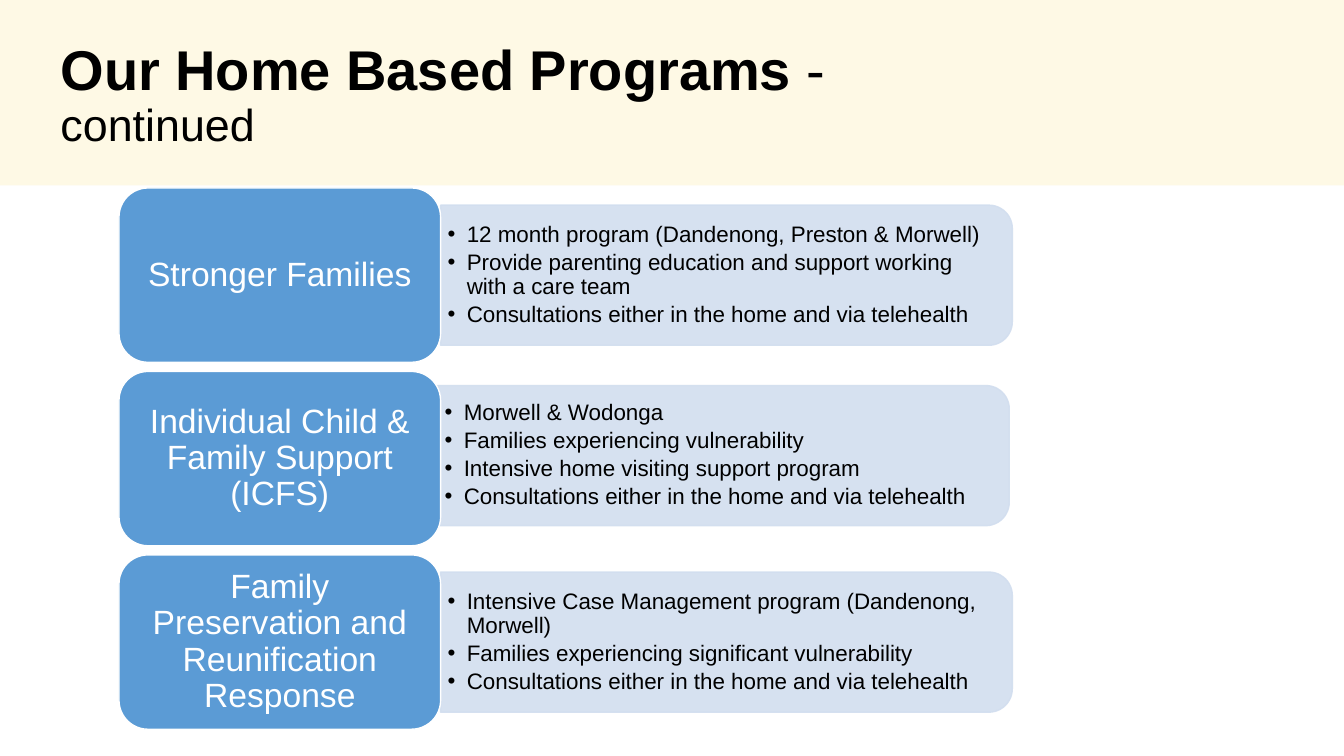
from lxml.etree import SubElement
from pptx import Presentation
from pptx.dml.color import RGBColor
from pptx.enum.shapes import MSO_SHAPE as Shape
from pptx.enum.text import MSO_ANCHOR as Anchor, PP_ALIGN as Align
from pptx.oxml.ns import qn
from pptx.util import Inches, Pt

COLORS = {"band": "FEF9E5", "label": "5B9BD5", "panel": "D2DEEF",
          "white": "FFFFFF", "black": "000000"}
FONT = "Arial"
WIDTH, HEIGHT = 13.33, 7.5
BAND_HEIGHT = 1.84
FIRST_CENTER, ROW_PITCH = 2.73, 1.82
LABEL_LEFT, LABEL_WIDTH, LABEL_HEIGHT = 1.18, 3.19, 1.73
PANEL_LEFT = LABEL_LEFT + LABEL_WIDTH
PANEL_WIDTH, PANEL_HEIGHT = 5.67, 1.39
LIST_WIDTH, LIST_HEIGHT = 5.6, 1.25
TELEHEALTH = "Consultations either in the home and via telehealth"
PROGRAMS = [
    ("Stronger Families", 0, [
        "12 month program (Dandenong, Preston & Morwell)",
        "Provide parenting education and support working with a care team",
        TELEHEALTH]),
    ("Individual Child & Family Support (ICFS)", -0.03, [
        "Morwell & Wodonga",
        "Families experiencing vulnerability",
        "Intensive home visiting support program",
        TELEHEALTH]),
    ("Family Preservation and Reunification Response", 0, [
        "Intensive Case Management program (Dandenong, Morwell)",
        "Families experiencing significant vulnerability",
        TELEHEALTH]),
]


def color(name):
    return RGBColor.from_string(COLORS[name])


def style_font(font, size, color_name, bold=False):
    font.name, font.size, font.bold = FONT, Pt(size), bold
    font.color.rgb = color(color_name)


def centered_box(center_x, center_y, width, height):
    return [Inches(value) for value in
            (center_x - width / 2, center_y - height / 2, width, height)]


def add_block(slide, kind, box, fill, line=None):
    shape = slide.shapes.add_shape(kind, *box)
    shape.shadow.inherit = False
    shape.fill.solid()
    shape.fill.fore_color.rgb = color(fill)
    if line:
        shape.line.color.rgb = color(line)
        shape.line.width = Pt(1)
    else:
        shape.line.fill.background()
    return shape


def add_title(slide):
    title = slide.shapes.title
    title.left, title.top = Inches(0.5), Inches(0.42)
    title.width, title.height = Inches(9.16), Inches(1.08)
    frame = title.text_frame
    frame.word_wrap = True
    frame.vertical_anchor = Anchor.MIDDLE
    paragraph = frame.paragraphs[0]
    paragraph.alignment = Align.LEFT
    paragraph.line_spacing = 0.9
    for text, size, bold in (("Our Home Based Programs ", 40, True),
                             ("- ", 40, False), ("continued", 32, False)):
        run = paragraph.add_run()
        run.text = text
        style_font(run.font, size, "black", bold)


def add_band(slide):
    box = [Inches(value) for value in (0, 0, WIDTH, BAND_HEIGHT)]
    band = add_block(slide, Shape.RECTANGLE, box, "band")
    slide.shapes.title.element.addprevious(band.element)


def add_panel(slide, center_y, shift):
    box = centered_box(PANEL_LEFT + PANEL_WIDTH / 2 + shift, center_y + shift,
                       PANEL_HEIGHT, PANEL_WIDTH)
    panel = add_block(slide, Shape.ROUND_2_SAME_RECTANGLE, box, "panel", "panel")
    panel.rotation = 90
    for tint in panel.element.spPr.iter(qn("a:srgbClr")):
        SubElement(tint, qn("a:alpha"), val="90000")


def add_list(slide, center_y, shift, items):
    box = centered_box(PANEL_LEFT + LIST_WIDTH / 2 + shift, center_y + shift,
                       LIST_WIDTH, LIST_HEIGHT)
    frame = slide.shapes.add_textbox(*box).text_frame
    frame.word_wrap = True
    frame.vertical_anchor = Anchor.MIDDLE
    frame.margin_left = frame.margin_right = Inches(0.07)
    frame.margin_top = frame.margin_bottom = Inches(0.03)
    frame.text = "\n".join(items)
    for paragraph in frame.paragraphs:
        properties = paragraph._p.get_or_add_pPr()
        properties.set("marL", str(Inches(0.19)))
        properties.set("indent", str(-Inches(0.19)))
        SubElement(properties, qn("a:buFont"), typeface=FONT)
        SubElement(properties, qn("a:buChar"), char="•")
        paragraph.level = 1
        paragraph.line_spacing = 0.9
        paragraph.space_after = Pt(2.7)
        style_font(paragraph.runs[0].font, 16, "black")


def add_label(slide, center_y, text):
    box = centered_box(LABEL_LEFT + LABEL_WIDTH / 2, center_y,
                       LABEL_WIDTH, LABEL_HEIGHT)
    frame = add_block(slide, Shape.ROUNDED_RECTANGLE, box, "label", "white").text_frame
    frame.word_wrap = True
    frame.vertical_anchor = Anchor.MIDDLE
    frame.text = text
    paragraph = frame.paragraphs[0]
    paragraph.alignment = Align.CENTER
    paragraph.line_spacing = 0.9
    style_font(paragraph.runs[0].font, 24, "white")


def main():
    presentation = Presentation()
    presentation.slide_width, presentation.slide_height = Inches(WIDTH), Inches(HEIGHT)
    slide = presentation.slides.add_slide(presentation.slide_layouts[5])
    add_title(slide)
    add_band(slide)
    for row, (name, shift, items) in enumerate(PROGRAMS):
        center_y = FIRST_CENTER + row * ROW_PITCH
        add_panel(slide, center_y, shift)
        add_list(slide, center_y, shift, items)
        add_label(slide, center_y, name)
    presentation.save("out.pptx")


if __name__ == "__main__":
    main()
